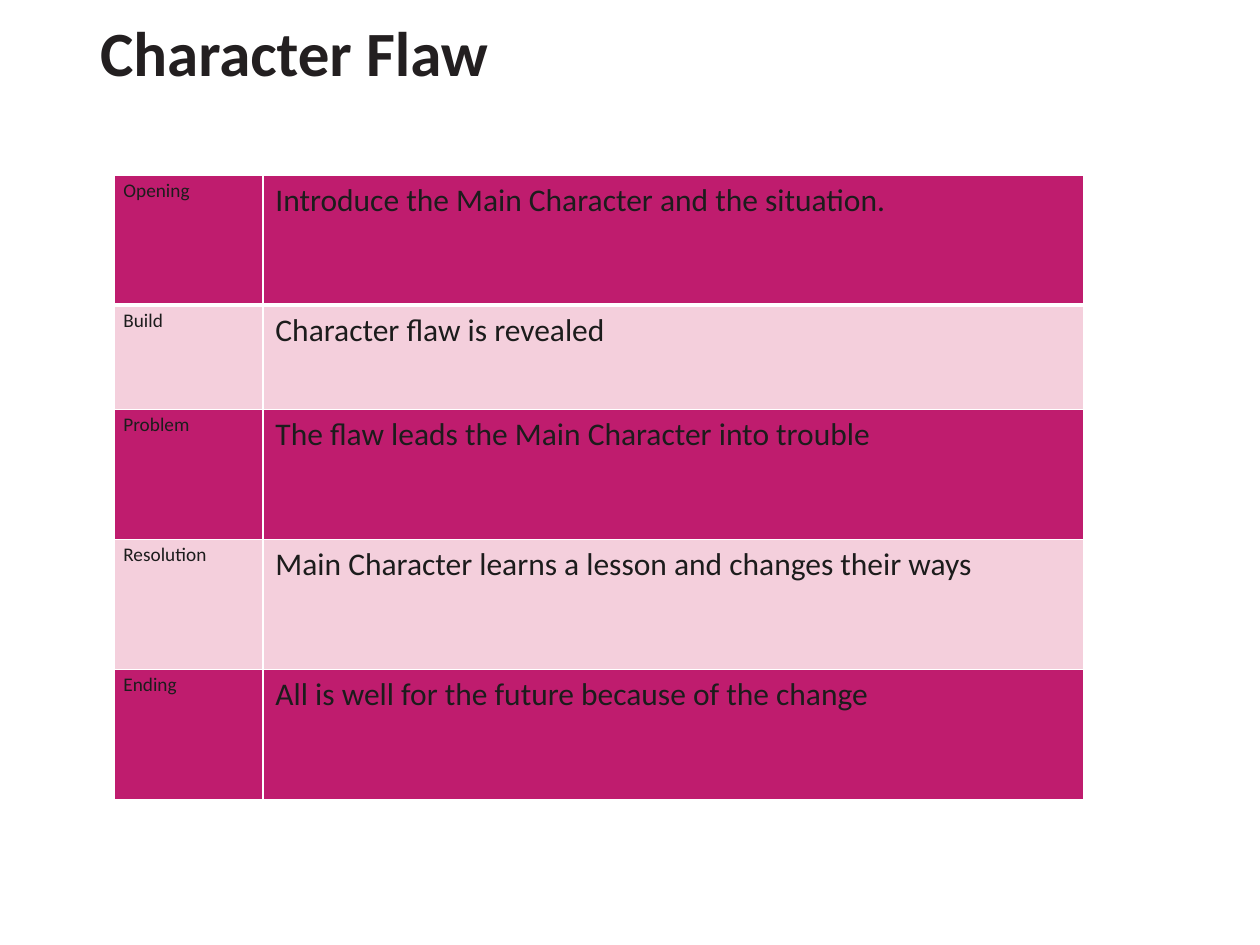
import pptx
import pptx.dml.color
import pptx.enum.text
import pptx.oxml
import pptx.oxml.ns
import pptx.util

Pt = pptx.util.Pt

TITLE = "Character Flaw"
STAGES = [
    ("Opening", "Introduce the Main Character and the situation."),
    ("Build", "Character flaw is revealed"),
    ("Problem", "The flaw leads the Main Character into trouble"),
    ("Resolution", "Main Character learns a lesson and changes their ways"),
    ("Ending", "All is well for the future because of the change"),
]
COLORS = {
    "title": "231F20",
    "text": "1C1C1C",
    "dark": "BF1C6E",
    "light": "F4CFDC",
    "border": "FFFFFF",
}
FONT = "Calibri"
TABLE_LEFT, TABLE_TOP = 65.5, 100
COLUMN_WIDTHS = [84.7, 469.2]
ROW_HEIGHTS = [74.4, 59.5, 74.4, 74.4, 74.4]


def rgb(name):
    return pptx.dml.color.RGBColor.from_string(COLORS[name])


def style_font(font, size, color, bold=False):
    font.name = FONT
    font.size = Pt(size)
    font.bold = bold
    font.color.rgb = rgb(color)


def set_borders(cell, widths):
    """Draw cell borders; widths maps L, R, T and B, in that order, to points."""
    properties = cell._tc.get_or_add_tcPr()
    for index, (side, width) in enumerate(widths.items()):
        line = pptx.oxml.parse_xml(
            f'<a:ln{side} {pptx.oxml.ns.nsdecls("a")} w="{Pt(width)}">'
            f'<a:solidFill><a:srgbClr val="{COLORS["border"]}"/></a:solidFill>'
            f'</a:ln{side}>'
        )
        properties.insert(index, line)


def round_corners(shape, adjustment):
    """Give a placeholder, already placed, a rounded rectangle outline."""
    geometry = pptx.oxml.parse_xml(
        f'<a:prstGeom {pptx.oxml.ns.nsdecls("a")} prst="roundRect"><a:avLst>'
        f'<a:gd name="adj" fmla="val {round(adjustment * 100000)}"/>'
        f'</a:avLst></a:prstGeom>'
    )
    shape._element.spPr.insert(1, geometry)


def add_title(slide):
    title = slide.shapes.title
    title.left, title.top, title.width, title.height = Pt(37.2), Pt(-13.4), Pt(643), Pt(90.7)
    round_corners(title, 0.096)
    frame = title.text_frame
    frame.text = TITLE
    frame.word_wrap = True
    frame.vertical_anchor = pptx.enum.text.MSO_ANCHOR.MIDDLE
    frame.margin_left = frame.margin_right = frame.margin_top = frame.margin_bottom = Pt(20)
    paragraph = frame.paragraphs[0]
    paragraph.alignment = pptx.enum.text.PP_ALIGN.LEFT
    paragraph.line_spacing = 0.9
    style_font(paragraph.font, 36, "title", bold=True)


def add_stage_table(slide):
    table = slide.shapes.add_table(
        len(STAGES), len(COLUMN_WIDTHS), Pt(TABLE_LEFT), Pt(TABLE_TOP),
        Pt(sum(COLUMN_WIDTHS)), Pt(sum(ROW_HEIGHTS)),
    ).table
    table.first_row = table.horz_banding = False
    for column, width in zip(table.columns, COLUMN_WIDTHS):
        column.width = Pt(width)
    for row_index, (stage, height) in enumerate(zip(STAGES, ROW_HEIGHTS)):
        table.rows[row_index].height = Pt(height)
        top = 3 if row_index == 1 else 1
        bottom = 3 if row_index == 0 else 1
        for column_index, text in enumerate(stage):
            cell = table.cell(row_index, column_index)
            cell.text = text
            cell.fill.solid()
            cell.fill.fore_color.rgb = rgb("light" if row_index % 2 else "dark")
            set_borders(cell, {"L": 1, "R": 1, "T": top, "B": bottom})
            paragraph = cell.text_frame.paragraphs[0]
            is_label = column_index == 0
            style_font(paragraph.font, 11 if is_label else 18, "text")
            if is_label:
                paragraph.line_spacing = 1.15
                cell.margin_left = cell.margin_right = Pt(5)
                cell.margin_top = cell.margin_bottom = 0


def main():
    deck = pptx.Presentation()
    deck.slide_width, deck.slide_height = Pt(720), Pt(540)
    slide = deck.slides.add_slide(deck.slide_layouts[5])
    add_title(slide)
    add_stage_table(slide)
    deck.save("out.pptx")


if __name__ == "__main__":
    main()
